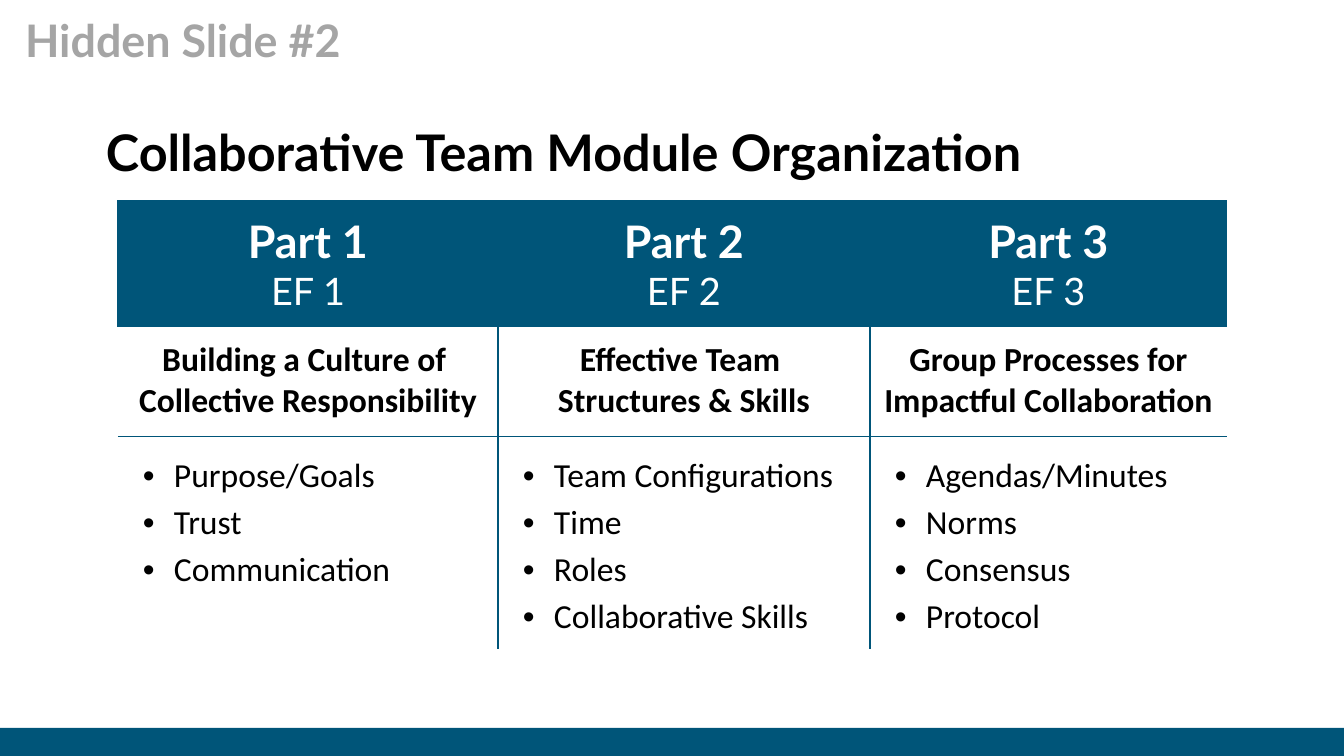
import dataclasses

import pptx
import pptx.dml.color
import pptx.enum.shapes
import pptx.enum.text
import pptx.oxml
import pptx.oxml.ns
import pptx.util

PX = 914400 / 100.8
SLIDE_WIDTH, SLIDE_HEIGHT = 1344, 756


@dataclasses.dataclass(frozen=True)
class Theme:
    blue: str = "005579"
    grey: str = "A5A5A5"
    black: str = "000000"
    white: str = "FFFFFF"
    heading_font: str = "Lato"
    body_font: str = "Calibri"
    title_size: int = 36
    label_size: int = 32
    subhead_size: int = 27
    body_size: int = 24
    inset: int = 13
    bullet_indent: int = 43
    bullet_hang: int = 31
    border_width: int = 1


THEME = Theme()
COLUMN_WIDTHS = (380, 372, 357)
ROW_HEIGHTS = (125, 110, 213)
PARTS = (
    ("Part 1", "EF 1",
     ("Building a Culture of ", "Collective Responsibility"),
     ("Purpose/Goals", "Trust", "Communication")),
    ("Part 2", "EF 2",
     ("Effective Team ", "Structures & Skills"),
     ("Team Configurations", "Time", "Roles", "Collaborative Skills")),
    ("Part 3", "EF 3",
     ("Group Processes for Impactful Collaboration ",),
     ("Agendas/Minutes", "Norms", "Consensus", "Protocol")),
)


def px(length):
    return pptx.util.Emu(round(length * PX))


def rgb(color):
    return pptx.dml.color.RGBColor.from_string(color)


def set_insets(target):
    target.margin_left = target.margin_right = px(THEME.inset)
    target.margin_top = target.margin_bottom = px(THEME.inset)


def write_lines(text_frame, lines, font, color, centered=False):
    """Write one paragraph per (text, size, bold) line."""
    text_frame.word_wrap = True
    for index, (text, size, bold) in enumerate(lines):
        paragraph = text_frame.paragraphs[0] if index == 0 else text_frame.add_paragraph()
        if centered:
            paragraph.alignment = pptx.enum.text.PP_ALIGN.CENTER
        run = paragraph.add_run()
        run.text = text
        run.font.name = font
        run.font.size = pptx.util.Pt(size)
        run.font.bold = bold
        run.font.color.rgb = rgb(color)


def add_bullet(paragraph):
    paragraph.line_spacing = 1.15
    properties = paragraph._p.get_or_add_pPr()
    properties.set("marL", str(px(THEME.bullet_indent)))
    properties.set("indent", str(-px(THEME.bullet_hang)))
    namespace = pptx.oxml.ns.nsdecls("a")
    for xml in (f'<a:buClr {namespace}><a:srgbClr val="{THEME.black}"/></a:buClr>',
                f'<a:buFont {namespace} typeface="Arial"/>',
                f'<a:buChar {namespace} char="•"/>'):
        properties.append(pptx.oxml.parse_xml(xml))


def style_cell(cell, edges, fill=None):
    """Draw the named edges (L, R, T, B), clear the others, then fill."""
    set_insets(cell)
    properties = cell._tc.get_or_add_tcPr()
    width = pptx.util.Pt(THEME.border_width)
    namespace = pptx.oxml.ns.nsdecls("a")
    solid = f'<a:solidFill><a:srgbClr val="{THEME.blue}"/></a:solidFill>'
    for edge in "LRTB":
        paint = solid if edge in edges else "<a:noFill/>"
        properties.append(pptx.oxml.parse_xml(
            f'<a:ln{edge} {namespace} w="{width}">{paint}</a:ln{edge}>'))
    if fill:
        cell.fill.solid()
        cell.fill.fore_color.rgb = rgb(fill)
    else:
        cell.fill.background()


def add_heading(slide, box, text, size, color):
    shape = slide.shapes.add_textbox(*map(px, box))
    set_insets(shape.text_frame)
    write_lines(shape.text_frame, [(text, size, True)], THEME.heading_font, color)


def add_footer_band(slide, box):
    band = slide.shapes.add_shape(
        pptx.enum.shapes.MSO_SHAPE.RECTANGLE, *map(px, box))
    band.shadow.inherit = False
    band.fill.solid()
    band.fill.fore_color.rgb = rgb(THEME.blue)
    band.line.fill.background()


def add_parts_table(slide, box):
    frame = slide.shapes.add_table(len(ROW_HEIGHTS), len(PARTS), *map(px, box))
    table = frame.table
    table.first_row = table.horz_banding = False
    for column, width in zip(table.columns, COLUMN_WIDTHS):
        column.width = px(width)
    for row, height in zip(table.rows, ROW_HEIGHTS):
        row.height = px(height)

    for index, (part, subhead, topic, items) in enumerate(PARTS):
        header, middle, detail = (table.cell(row, index) for row in range(3))
        inner_edges = ("L" if index > 0 else "") + ("R" if index < len(PARTS) - 1 else "")

        # Header row
        style_cell(header, "LRTB", THEME.blue)
        write_lines(header.text_frame,
                    [(part, THEME.label_size, True), (subhead, THEME.subhead_size, False)],
                    THEME.heading_font, THEME.white, centered=True)

        # Topic row
        style_cell(middle, inner_edges + "TB")
        write_lines(middle.text_frame, [(line, THEME.body_size, True) for line in topic],
                    THEME.body_font, THEME.black, centered=True)

        # Bulleted details
        style_cell(detail, inner_edges + "T")
        write_lines(detail.text_frame, [(item, THEME.body_size, False) for item in items],
                    THEME.body_font, THEME.black)
        for paragraph in detail.text_frame.paragraphs:
            add_bullet(paragraph)


def build_organization_slide(presentation):
    slide = presentation.slides.add_slide(presentation.slide_layouts[6])
    add_footer_band(slide, (0, 728, SLIDE_WIDTH, 28))
    add_heading(slide, (12, 0, 1159, 91), "Hidden Slide #2", THEME.label_size, THEME.grey)
    add_heading(slide, (93, 108, 1159, 96), "Collaborative Team Module Organization",
                THEME.title_size, THEME.black)
    add_parts_table(slide, (118, 201, sum(COLUMN_WIDTHS), sum(ROW_HEIGHTS)))


def main():
    presentation = pptx.Presentation()
    presentation.slide_width = px(SLIDE_WIDTH)
    presentation.slide_height = px(SLIDE_HEIGHT)
    build_organization_slide(presentation)
    presentation.save("out.pptx")


if __name__ == "__main__":
    main()
